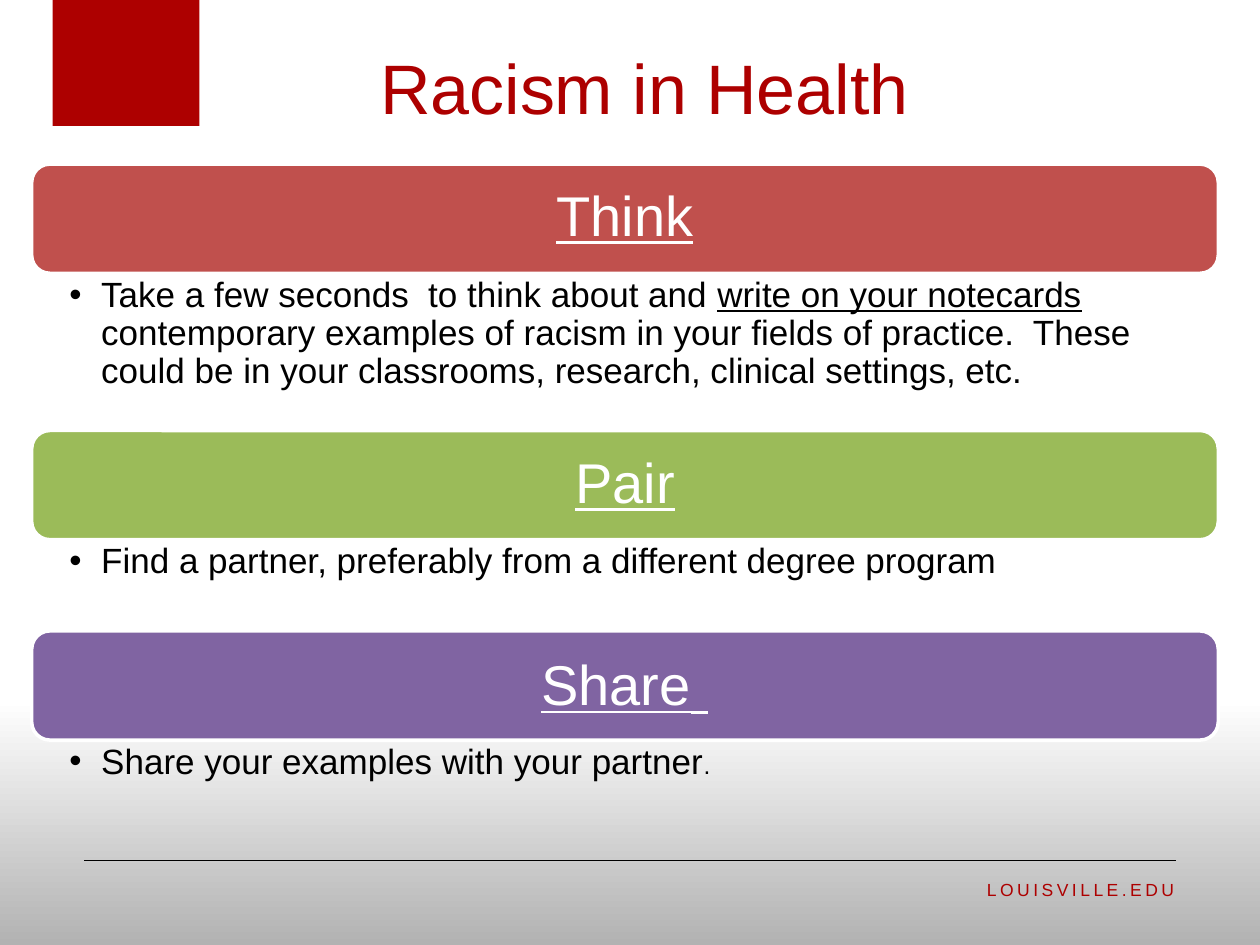
from lxml.etree import SubElement
from pptx import Presentation
from pptx.dml.color import RGBColor
from pptx.enum.shapes import MSO_CONNECTOR, MSO_SHAPE
from pptx.enum.text import MSO_ANCHOR, MSO_AUTO_SIZE, PP_ALIGN
from pptx.oxml.ns import qn
from pptx.util import Cm, Pt

CARDINAL = "AD0000"


def rgb(color):
    return RGBColor.from_string(color)


def add_runs(paragraph, pieces, color):
    """Append (text, size, underline) pieces to the paragraph as Arial runs."""
    for text, size, underline in pieces:
        run = paragraph.add_run()
        run.text = text
        run.font.name = "Arial"
        run.font.size = Pt(size)
        run.font.bold = False
        run.font.underline = underline
        run.font.color.rgb = rgb(color)


prs = Presentation()
prs.slide_width, prs.slide_height = Cm(25.4), Cm(19.05)
slide = prs.slides.add_slide(prs.slide_layouts.get_by_name("Comparison"))
shapes = slide.shapes

# Background
backdrop = slide.background.fill
backdrop.gradient()
backdrop.gradient_angle = 270
for stop, position, color in zip(backdrop.gradient_stops, (0.74, 1), ("FFFFFF", "B2B2B2")):
    stop.position = position
    stop.color.rgb = rgb(color)

# Corner block, footer rule and web address
corner = shapes.add_shape(MSO_SHAPE.RECTANGLE, Cm(1.06), 0, Cm(2.96), Cm(2.54))
corner.shadow.inherit = False
corner.fill.solid()
corner.fill.fore_color.rgb = rgb(CARDINAL)
corner.line.fill.background()

rule = shapes.add_connector(MSO_CONNECTOR.STRAIGHT, Cm(1.7), Cm(17.35), Cm(23.7), Cm(17.35))
rule.line.color.rgb = rgb("000000")
rule.line.width = Pt(0.5)
SubElement(rule._element.spPr, qn("a:effectLst"))

address = shapes.add_textbox(Cm(18.2), Cm(17.6), Cm(5.72), Cm(1.02)).text_frame
address.word_wrap = True
address.paragraphs[0].alignment = PP_ALIGN.RIGHT
add_runs(address.paragraphs[0], [("LOUISVILLE.EDU", 10, False)], CARDINAL)
address.paragraphs[0].runs[0].font._element.set("spc", "200")

# Title
title = shapes.title
title.left, title.top, title.width, title.height = Cm(7.41), Cm(0.38), Cm(17.15), Cm(2.34)
title.text_frame.auto_size = MSO_AUTO_SIZE.NONE
title.text_frame.vertical_anchor = MSO_ANCHOR.BOTTOM
title.text_frame.paragraphs[0].alignment = PP_ALIGN.LEFT
add_runs(title.text_frame.paragraphs[0], [("Racism in Health", 40, False)], CARDINAL)

# Steps: a coloured band with its instruction below, stacked down the slide
steps = [
    ("C0504D", [("Think", 32, True)], 3.17, [
        ("Take a few seconds  to think about and ", 20, False),
        ("write on your notecards ", 20, True),
        ("contemporary examples of racism in your fields of practice.  These could be "
         "in your classrooms, research, clinical settings, etc.", 20, False)]),
    ("9BBB59", [("Pair", 32, True)], 1.84, [
        ("Find a partner, preferably from a different degree program", 20, False)]),
    ("8064A2", [("Share", 32, True), (" ", 36, True)], 1.84, [
        ("Share your examples with your partner", 20, False), (".", 14, False)]),
]
left, width, band_height = 0.64, 23.92, 2.2
top = 3.31
*instructions, spare = list(slide.placeholders)[1:]
spare._element.getparent().remove(spare._element)

for instruction, (color, heading, list_height, wording) in zip(instructions, steps):
    band = shapes.add_shape(MSO_SHAPE.ROUNDED_RECTANGLE,
                            Cm(left), Cm(top), Cm(width), Cm(band_height))
    band.shadow.inherit = False
    band.fill.solid()
    band.fill.fore_color.rgb = rgb(color)
    band.line.color.rgb = rgb("FFFFFF")
    band.line.width = Pt(2)
    band.text_frame.vertical_anchor = MSO_ANCHOR.MIDDLE
    heading_line = band.text_frame.paragraphs[0]
    heading_line.alignment = PP_ALIGN.CENTER
    heading_line.line_spacing = 0.9
    add_runs(heading_line, heading, "FFFFFF")
    top += band_height

    instruction.left, instruction.top = Cm(left), Cm(top)
    instruction.width, instruction.height = Cm(width), Cm(list_height)
    frame = instruction.text_frame
    frame.auto_size = MSO_AUTO_SIZE.NONE
    frame.vertical_anchor = MSO_ANCHOR.TOP
    frame.margin_left, frame.margin_right = Cm(0.76), Cm(0.41)
    frame.margin_top = frame.margin_bottom = Cm(0.08)
    bullet_line = frame.paragraphs[0]
    bullet_line.alignment = PP_ALIGN.LEFT
    bullet_line.line_spacing = 0.9
    bullet_line.space_before = Pt(0)
    properties = bullet_line._p.get_or_add_pPr()
    properties.set("marL", str(Cm(0.64)))
    properties.set("indent", str(-Cm(0.64)))
    SubElement(properties, qn("a:buFont"), typeface="Arial")
    SubElement(properties, qn("a:buChar"), char="•")
    add_runs(bullet_line, wording, "000000")
    top += list_height

prs.save("out.pptx")
